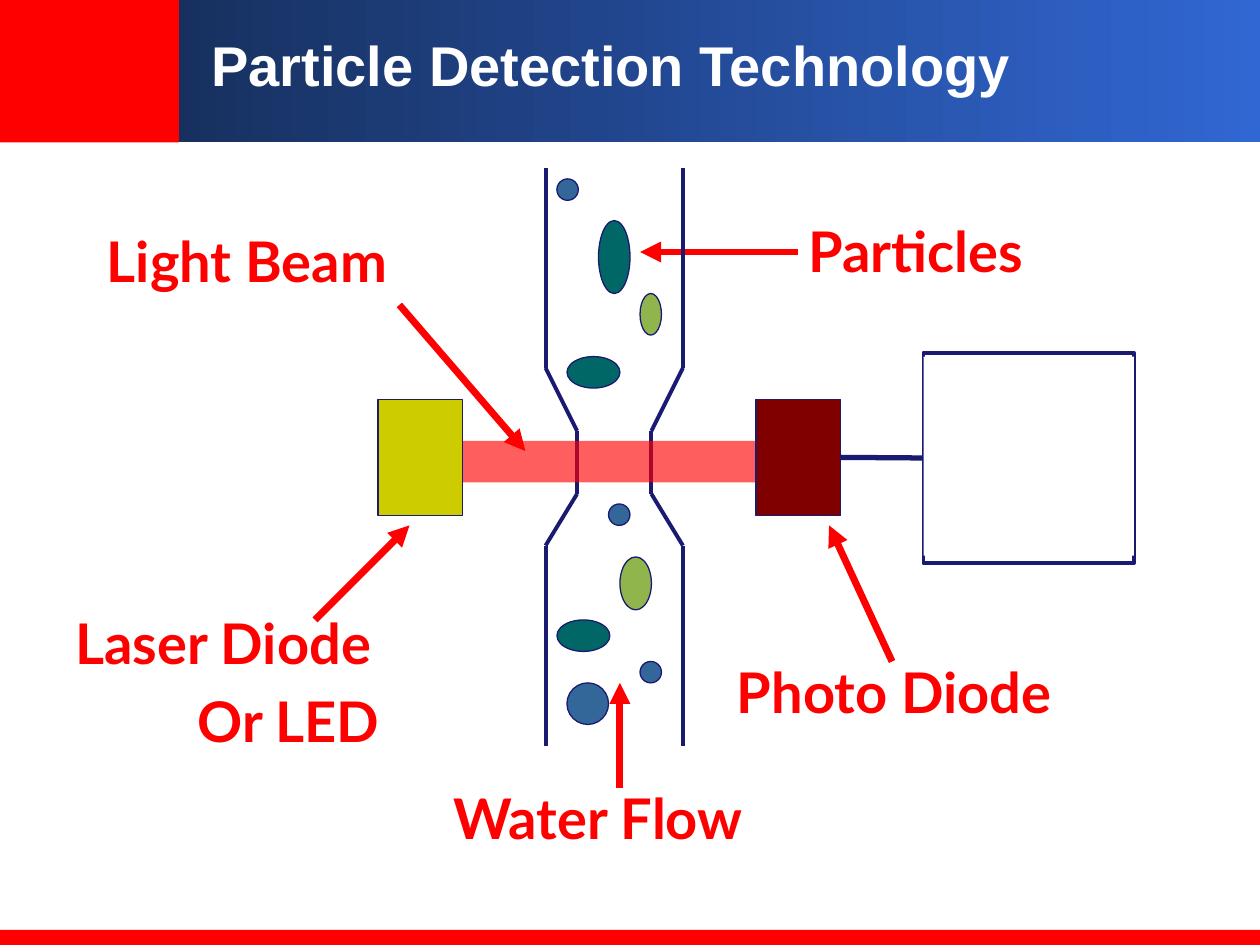
from dataclasses import dataclass
from itertools import pairwise

from lxml import etree
from pptx import Presentation
from pptx import util as u
from pptx.dml.color import RGBColor
from pptx.enum import shapes, text
from pptx.oxml import parse_xml
from pptx.oxml.ns import nsdecls, qn


@dataclass(frozen=True)
class Theme:
    red: str = "FF0000"
    white: str = "FFFFFF"
    navy: str = "1A1A70"
    teal: str = "006666"
    blue: str = "336699"
    green: str = "90B54D"
    yellow: str = "CCCC00"
    maroon: str = "800000"
    banner_start: str = "17305F"
    banner_end: str = "3167D3"
    title_font: str = "Arial"
    label_font: str = "Lato"
    text_size: float = 32
    paragraph_gap: float = 6.4
    outline: float = 0.75
    wall: float = 2.25
    cable: float = 3
    arrow: float = 4


THEME = Theme()
LEFT, CENTER = text.PP_ALIGN.LEFT, text.PP_ALIGN.CENTER

TITLE = "Particle Detection Technology"
TITLE_BOX = (1.58, 0.17, 7.58, 0.67)

# Lines of (wording, alignment), box, wrap
LABELS = [
    ([("Laser Diode", LEFT), ("Or LED", CENTER)], (0.5, 4.78, 3.58, 1.27), True),
    ([("Photo Diode", LEFT)], (5.75, 5.17, 3.32, 0.63), False),
    ([("Water Flow", LEFT)], (3.5, 6.17, 3.11, 0.63), False),
    ([("Particles", LEFT)], (6.32, 1.67, 2.6, 0.63), False),
    ([("Light Beam", LEFT)], (0.75, 1.75, 3.23, 0.63), True),
]
ARROWS = [
    ((4.92, 6.25), (4.92, 5.42)),
    ((6.33, 2), (5.08, 2)),
    ((3.17, 2.42), (4.17, 3.58)),
    ((2.5, 4.92), (3.25, 4.17)),
    ((7.08, 5.25), (6.58, 4.17)),
]
LEFT_WALL = [(4.33, 1.33), (4.33, 2.92), (4.58, 3.42),
             (4.58, 3.92), (4.33, 4.33), (4.33, 5.92)]
TUBE_CENTER = 4.875
PARTICLES = [
    (THEME.teal, (4.75, 1.75, 0.25, 0.58)),
    (THEME.blue, (4.5, 5.42, 0.33, 0.33)),
    (THEME.green, (4.92, 4.42, 0.25, 0.42)),
    (THEME.blue, (4.42, 1.42, 0.17, 0.17)),
    (THEME.green, (5.08, 2.33, 0.17, 0.33)),
    (THEME.teal, (4.5, 2.83, 0.42, 0.25)),
    (THEME.teal, (4.42, 4.92, 0.42, 0.25)),
    (THEME.blue, (5.08, 5.25, 0.17, 0.17)),
    (THEME.blue, (4.83, 4, 0.17, 0.17)),
]
BEAM = (3.67, 3.5, 2.33, 0.33)
BEAM_OPACITY = 63
LASER = (3, 3.17, 0.67, 0.92)
PHOTO_DIODE = (6, 3.17, 0.67, 0.92)
DISPLAY = (7.33, 2.8, 1.67, 1.67)
DISPLAY_FACE = (7.33, 2.83, 1.67, 1.58)


def inches(values):
    return [u.Inches(value) for value in values]


def add_block(slide, box, fill=None, line_width=None,
              kind=shapes.MSO_SHAPE.RECTANGLE):
    block = slide.shapes.add_shape(kind, *inches(box))
    block.shadow.inherit = False
    if fill:
        block.fill.solid()
        block.fill.fore_color.rgb = RGBColor.from_string(fill)
    else:
        block.fill.background()
    if line_width:
        block.line.color.rgb = RGBColor.from_string(THEME.navy)
        block.line.width = u.Pt(line_width)
    else:
        block.line.fill.background()
    return block


def add_line(slide, start, end, color, width, arrow=False):
    line = slide.shapes.add_connector(
        shapes.MSO_CONNECTOR.STRAIGHT, *inches((*start, *end)))
    line.line.color.rgb = RGBColor.from_string(color)
    line.line.width = u.Pt(width)
    if arrow:
        etree.SubElement(line.line._get_or_add_ln(), qn("a:tailEnd"), type="triangle")
    etree.SubElement(line._element.spPr, qn("a:effectLst"))
    return line


def add_words(slide, lines, box, font_name, color, wrap=True):
    words = slide.shapes.add_textbox(*inches(box))
    frame = words.text_frame
    frame.word_wrap = wrap
    frame.text = "\n".join(wording for wording, _ in lines)
    for index, (paragraph, (_, alignment)) in enumerate(zip(frame.paragraphs, lines)):
        paragraph.alignment = alignment
        paragraph.space_before = u.Pt(THEME.paragraph_gap if index else 0)
        paragraph.font.name = font_name
        paragraph.font.size = u.Pt(THEME.text_size)
        paragraph.font.bold = True
        paragraph.font.color.rgb = RGBColor.from_string(color)
    return frame


def add_banner(slide):
    add_block(slide, (0, 0, 1.42, 1.13), THEME.red)
    banner = add_block(slide, (1.42, 0, 8.58, 1.13))
    banner.fill.gradient()
    banner.fill.gradient_angle = 0
    for stop, color in zip(banner.fill.gradient_stops,
                           (THEME.banner_start, THEME.banner_end)):
        stop.color.rgb = RGBColor.from_string(color)
    add_block(slide, (0, 7.38, 10, 0.12), THEME.red)

    title = add_words(slide, [(TITLE, LEFT)], TITLE_BOX, THEME.title_font, THEME.white)
    title.vertical_anchor = text.MSO_ANCHOR.MIDDLE
    run_properties = title.paragraphs[0].runs[0].font._element
    run_properties.append(parse_xml(
        f'<a:effectLst {nsdecls("a")}><a:outerShdw dist="38100" dir="2700000">'
        '<a:srgbClr val="000000"/></a:outerShdw></a:effectLst>'))


def add_tube(slide):
    right_wall = [(2 * TUBE_CENTER - x, y) for x, y in LEFT_WALL]
    for wall in (LEFT_WALL, right_wall):
        for start, end in pairwise(wall):
            add_line(slide, start, end, THEME.navy, THEME.wall)
    for color, box in PARTICLES:
        add_block(slide, box, color, THEME.outline, shapes.MSO_SHAPE.OVAL)


def add_detector(slide):
    beam = add_block(slide, BEAM, THEME.red)
    beam_color = beam._element.spPr.find(qn("a:solidFill"))[0]
    etree.SubElement(beam_color, qn("a:alpha"), val=str(BEAM_OPACITY * 1000))

    add_block(slide, LASER, THEME.yellow, THEME.outline)
    photo_diode = add_block(slide, PHOTO_DIODE, THEME.maroon, THEME.outline)
    display = add_block(slide, DISPLAY, line_width=THEME.wall)
    cable = add_line(slide, (6.67, 3.64), (7.33, 3.64), THEME.navy, THEME.cable)
    cable.begin_connect(photo_diode, 3)
    cable.end_connect(display, 1)
    add_block(slide, DISPLAY_FACE, THEME.white)


def main():
    deck = Presentation()
    deck.slide_width, deck.slide_height = inches((10, 7.5))
    slide = deck.slides.add_slide(deck.slide_layouts[6])
    add_banner(slide)
    for lines, box, wrap in LABELS:
        add_words(slide, lines, box, THEME.label_font, THEME.red, wrap)
    for start, end in ARROWS:
        add_line(slide, start, end, THEME.red, THEME.arrow, arrow=True)
    add_tube(slide)
    add_detector(slide)
    deck.save("out.pptx")


if __name__ == "__main__":
    main()
